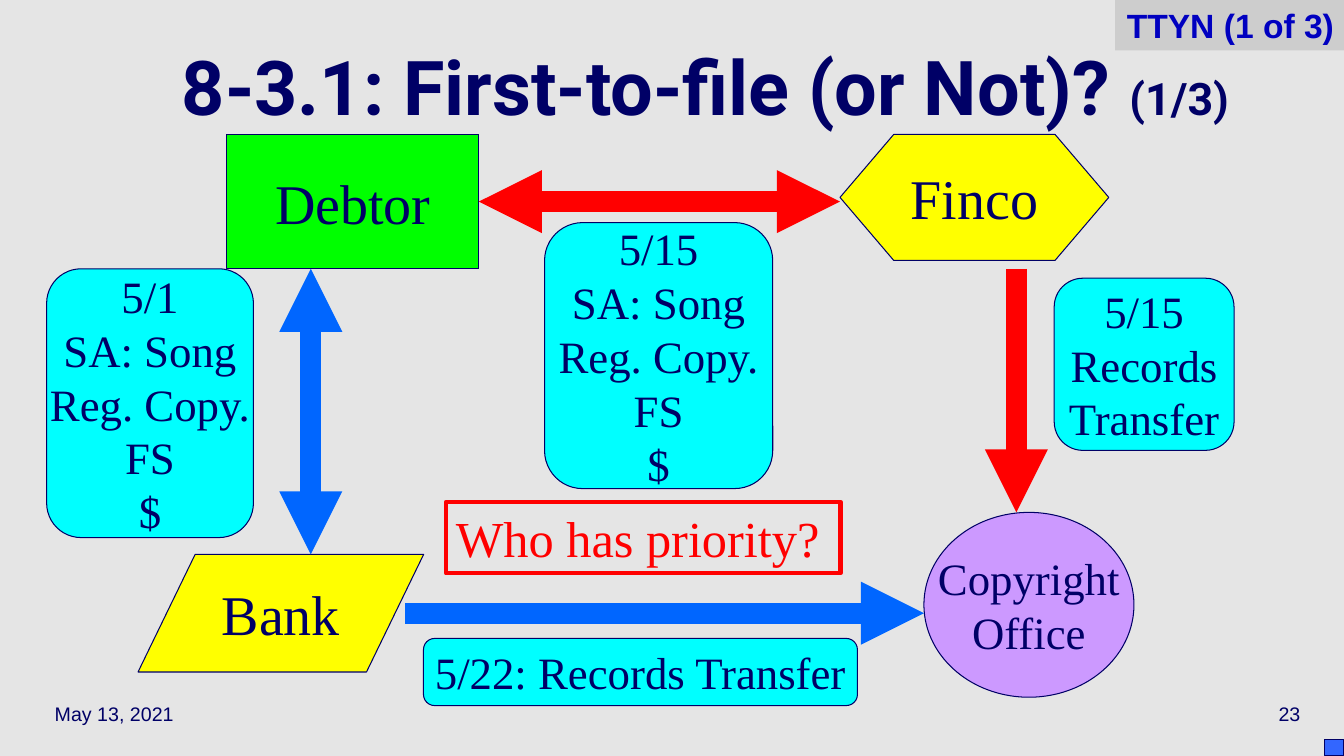
"""Builds the slide on first-to-file priority between Bank and Finco."""
from dataclasses import dataclass

from lxml import etree
from pptx import Presentation
from pptx.dml.color import RGBColor
from pptx.enum.shapes import MSO_CONNECTOR, MSO_SHAPE
from pptx.enum.text import MSO_ANCHOR, PP_ALIGN
from pptx.oxml.ns import qn
from pptx.util import Pt

LEFT, CENTER, RIGHT = PP_ALIGN.LEFT, PP_ALIGN.CENTER, PP_ALIGN.RIGHT
CARD = MSO_SHAPE.FLOWCHART_ALTERNATE_PROCESS
BOX = MSO_SHAPE.RECTANGLE
RIGHT_SIDE = 3


@dataclass(frozen=True)
class Theme:
    navy: str = "000066"
    background: str = "E5E5E5"
    tag_fill: str = "CDCDCD"
    tag_text: str = "0000C0"
    yellow: str = "FFFF00"
    green: str = "00FF00"
    cyan: str = "00FFFF"
    purple: str = "CC99FF"
    red: str = "FF0000"
    blue: str = "0066FF"
    corner: str = "3366FF"
    title_font: str = "Roboto"
    body_font: str = "Times New Roman"
    small_font: str = "Arial"
    title_size: int = 54
    part_size: int = 32
    party_size: int = 40
    card_size: int = 32
    question_size: int = 36
    tag_size: int = 24
    footer_size: int = 14
    outline: float = 0.75
    question_outline: int = 3
    arrow: int = 15


THEME = Theme()
SLIDE_SIZE = (960, 540)

TITLE = ("8‑3.1: First-to-file (or Not)? ", "(1/3)")
TITLE_AREA = (64, 24, 880, 90)
FOOTERS = [("May 13, 2021", 32, LEFT), ("23", 736, RIGHT)]
FOOTER_TOP, FOOTER_WIDTH, FOOTER_HEIGHT = 492, 200, 36

PARTIES = {
    "Bank": (MSO_SHAPE.FLOWCHART_DATA, (98.6, 396, 204, 84), THEME.yellow),
    "Debtor": (MSO_SHAPE.FLOWCHART_PROCESS, (162, 96, 180, 96), THEME.green),
    "Finco": (MSO_SHAPE.FLOWCHART_PREPARATION, (600, 96, 192, 90), THEME.yellow),
}
OFFICE = (["Copyright", "Office"], (660, 366, 150, 132))
LOAN_TERMS = ["SA: Song", "Reg. Copy.", "FS", "$"]
CARDS = [
    (["5/1", *LOAN_TERMS], (33.3, 192, 147.7, 192)),
    (["5/15", *LOAN_TERMS], (389, 159, 163, 190)),
    (["5/15", "Records", "Transfer"], (753, 198.7, 128.5, 123)),
    (["5/22: Records Transfer"], (302.5, 456, 310, 48)),
]
QUESTION = ("Who has priority?", (318.5, 358.5, 282, 51))
TAG = ("TTYN (1 of 3)", (796.5, 0, 163.5, 36))
CORNER_AREA = (946, 528, 14, 12)

DEBTOR_FINCO = ((342, 144), (600, 144), THEME.red, True)
ARROWS = [
    ((222, 192), (222, 396), THEME.blue, True),
    ((726, 192), (726, 366), THEME.red, False),
    ((289.5, 438), (660, 438), THEME.blue, False),
]


def rgb(value):
    return RGBColor.from_string(value)


def style(font, face, size, color, bold=False):
    font.name, font.size, font.bold = face, Pt(size), bold
    font.color.rgb = rgb(color)


def write(shape, lines, face, size, color, align=CENTER, bold=False,
          wrap=False):
    frame = shape.text_frame
    frame.word_wrap = wrap
    frame.vertical_anchor = MSO_ANCHOR.MIDDLE
    frame.text = "\n".join(lines)
    for paragraph in frame.paragraphs:
        paragraph.alignment = align
        style(paragraph.font, face, size, color, bold)


def add_block(slide, kind, area, fill=None, line=THEME.navy,
              width=THEME.outline):
    block = slide.shapes.add_shape(kind, *map(Pt, area))
    block.shadow.inherit = False
    if fill:
        block.fill.solid()
        block.fill.fore_color.rgb = rgb(fill)
    else:
        block.fill.background()
    if line:
        block.line.color.rgb = rgb(line)
        block.line.width = Pt(width)
    else:
        block.line.fill.background()
    return block


def add_arrow(slide, start, end, color, both_ways):
    arrow = slide.shapes.add_connector(
        MSO_CONNECTOR.STRAIGHT, *map(Pt, (*start, *end)))
    arrow.line.color.rgb = rgb(color)
    arrow.line.width = Pt(THEME.arrow)
    properties = arrow.line._get_or_add_ln()
    for tip in ("a:headEnd", "a:tailEnd") if both_ways else ("a:tailEnd",):
        etree.SubElement(properties, qn(tip), type="triangle")
    etree.SubElement(arrow._element.spPr, qn("a:effectLst"))
    return arrow


def add_title(slide):
    title = slide.shapes.add_textbox(*map(Pt, TITLE_AREA))
    title.text_frame.word_wrap = True
    title.text_frame.vertical_anchor = MSO_ANCHOR.MIDDLE
    heading = title.text_frame.paragraphs[0]
    heading.alignment = CENTER
    heading.line_spacing = 0.7
    for text, size in zip(TITLE, (THEME.title_size, THEME.part_size)):
        run = heading.add_run()
        run.text = text
        style(run.font, THEME.title_font, size, THEME.navy, True)


def main():
    deck = Presentation()
    deck.slide_width, deck.slide_height = map(Pt, SLIDE_SIZE)
    slide = deck.slides.add_slide(deck.slide_layouts[6])
    slide.background.fill.solid()
    slide.background.fill.fore_color.rgb = rgb(THEME.background)

    for text, left, align in FOOTERS:
        footer = slide.shapes.add_textbox(
            *map(Pt, (left, FOOTER_TOP, FOOTER_WIDTH, FOOTER_HEIGHT)))
        write(footer, [text], THEME.small_font, THEME.footer_size, THEME.navy,
              align, wrap=True)
    add_title(slide)

    parties = {}
    for name, (kind, area, fill) in PARTIES.items():
        parties[name] = add_block(slide, kind, area, fill)
        write(parties[name], [name], THEME.body_font, THEME.party_size,
              THEME.navy)

    loan = add_arrow(slide, *DEBTOR_FINCO)
    loan.begin_connect(parties["Debtor"], RIGHT_SIDE)
    for arrow in ARROWS:
        add_arrow(slide, *arrow)

    office_lines, office_area = OFFICE
    notes = [(CARD, lines, area, THEME.cyan) for lines, area in CARDS]
    notes.append((MSO_SHAPE.FLOWCHART_CONNECTOR, office_lines, office_area,
                  THEME.purple))
    for kind, lines, area, fill in notes:
        write(add_block(slide, kind, area, fill), lines, THEME.body_font,
              THEME.card_size, THEME.navy)

    question, question_area = QUESTION
    write(add_block(slide, BOX, question_area, line=THEME.red,
                    width=THEME.question_outline),
          [question], THEME.body_font, THEME.question_size, THEME.red, LEFT,
          wrap=True)
    add_block(slide, BOX, CORNER_AREA, THEME.corner)
    tag, tag_area = TAG
    write(add_block(slide, BOX, tag_area, THEME.tag_fill, line=None), [tag],
          THEME.small_font, THEME.tag_size, THEME.tag_text, RIGHT, bold=True,
          wrap=True)
    deck.save("out.pptx")


if __name__ == "__main__":
    main()
